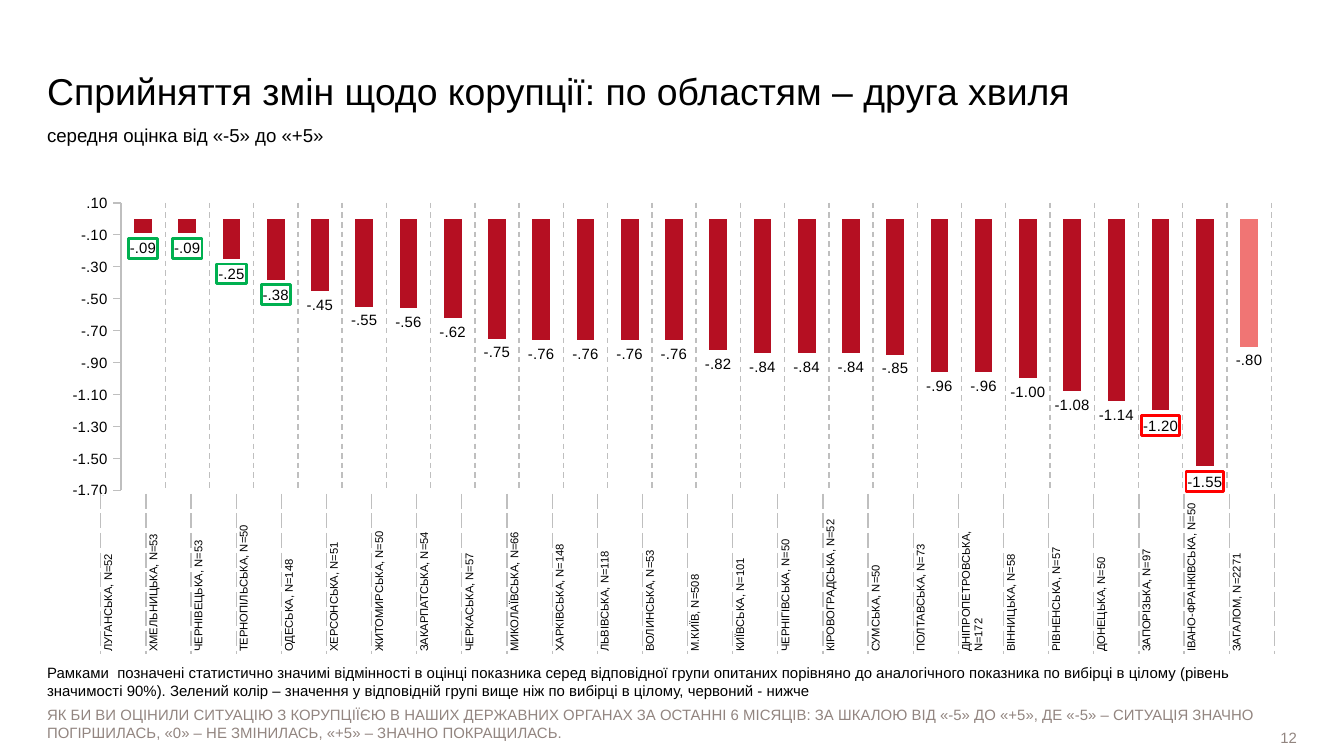
"""Build the regional corruption perception slide with its column chart."""
import pptx
import pptx.chart.data
import pptx.dml.color
import pptx.enum.chart
import pptx.enum.dml
import pptx.enum.text
import pptx.oxml
import pptx.oxml.ns
import pptx.util

Inches = pptx.util.Inches
FONT = "Arial"
NUMBER_FORMAT = "####.00"
COLORS = {
    "text": "000000", "muted": "928580", "paper": "FFFFFF", "rule": "BFBFBF",
    "region": "B50F22", "total": "F07574", "higher": "00B050", "lower": "FF0000",
}
REGIONS = [
    ("ЛУГАНСЬКА", 52, -0.09, "higher"), ("ХМЕЛЬНИЦЬКА", 53, -0.09, "higher"),
    ("ЧЕРНІВЕЦЬКА", 53, -0.25, "higher"), ("ТЕРНОПІЛЬСЬКА", 50, -0.38, "higher"),
    ("ОДЕСЬКА", 148, -0.45, None), ("ХЕРСОНСЬКА", 51, -0.55, None),
    ("ЖИТОМИРСЬКА", 50, -0.56, None), ("ЗАКАРПАТСЬКА", 54, -0.62, None),
    ("ЧЕРКАСЬКА", 57, -0.75, None), ("МИКОЛАЇВСЬКА", 66, -0.76, None),
    ("ХАРКІВСЬКА", 148, -0.76, None), ("ЛЬВІВСЬКА", 118, -0.76, None),
    ("ВОЛИНСЬКА", 53, -0.76, None), ("М.КИЇВ", 508, -0.82, None),
    ("КИЇВСЬКА", 101, -0.84, None), ("ЧЕРНІГІВСЬКА", 50, -0.84, None),
    ("КІРОВОГРАДСЬКА", 52, -0.84, None), ("СУМСЬКА", 50, -0.85, None),
    ("ПОЛТАВСЬКА", 73, -0.96, None), ("ДНІПРОПЕТРОВСЬКА", 172, -0.96, None),
    ("ВІННИЦЬКА", 58, -1, None), ("РІВНЕНСЬКА", 57, -1.08, None),
    ("ДОНЕЦЬКА", 50, -1.14, None), ("ЗАПОРІЗЬКА", 97, -1.2, "lower"),
    ("ІВАНО-ФРАНКІВСЬКА", 50, -1.55, "lower"), ("ЗАГАЛОМ", 2271, -0.8, None),
]
PAGE_NUMBER = ("12", (8.23, 5.41, 1.42, 0.16), 8, "muted")
TITLE = ("Сприйняття змін щодо корупції: по областям – друга хвиля", (0.35, 0.21, 9.45, 0.63), 20, "text")
SUBTITLE = ("середня оцінка від «-5» до «+5»", (0.35, 0.92, 9.29, 0.24), 10, "text")
QUESTION = (
    "ЯК БИ ВИ ОЦІНИЛИ СИТУАЦІЮ З КОРУПЦІЇЄЮ В НАШИХ ДЕРЖАВНИХ ОРГАНАХ ЗА ОСТАННІ 6 МІСЯЦІВ: "
    "ЗА ШКАЛОЮ ВІД «-5» ДО «+5», ДЕ «-5» – СИТУАЦІЯ ЗНАЧНО ПОГІРШИЛАСЬ, «0» – НЕ ЗМІНИЛАСЬ, "
    "«+5» – ЗНАЧНО ПОКРАЩИЛАСЬ.", (0.35, 5.25, 9.29, 0.16), 8, "muted")
FRAME_NOTE = (
    "Рамками  позначені статистично значимі відмінності в оцінці показника серед відповідної групи "
    "опитаних порівняно до аналогічного показника по вибірці в цілому (рівень значимості 90%). "
    "Зелений колір – значення у відповідній групі вище ніж по вибірці в цілому, червоний - нижче",
    (0.35, 4.94, 9.29, 0.16), 8, "text")
SLIDE_WIDTH = 10
CHART_AREA = (0.35, 1.4, 9.29, 2.36)
PLOT_AREA = (0.9, 1.51, 8.56, 2.14)
TABLE_AREA = (0.75, 3.68, 8.74, 1.18)


def rgb(name):
    return pptx.dml.color.RGBColor.from_string(COLORS[name])


def style_font(font, size, color="text"):
    font.name = FONT
    font.size = pptx.util.Pt(size)
    font.color.rgb = rgb(color)


def style_rule(line, dashed=False):
    line.color.rgb = rgb("rule")
    line.width = pptx.util.Pt(0.75)
    if dashed:
        line.dash_style = pptx.enum.dml.MSO_LINE.DASH


def add_text(page, content, anchor="TOP", align="LEFT", space_before=0):
    text, area, size, color = content
    box = page.shapes.add_textbox(*map(Inches, area))
    frame = box.text_frame
    frame.word_wrap = True
    frame.margin_left = frame.margin_top = frame.margin_right = frame.margin_bottom = 0
    frame.vertical_anchor = getattr(pptx.enum.text.MSO_ANCHOR, anchor)
    para = frame.paragraphs[0]
    para.text = text
    para.alignment = getattr(pptx.enum.text.PP_ALIGN, align)
    para.space_before = pptx.util.Pt(space_before)
    style_font(para.font, size, color)
    return box


def frame_label(series, index, color):
    label = series.points[index].data_label
    style_font(label.font, 8)
    label.position = pptx.enum.chart.XL_LABEL_POSITION.OUTSIDE_END
    mark = next(item for item in series.data_labels._element.findall(pptx.oxml.ns.qn("c:dLbl"))
                if item.find(pptx.oxml.ns.qn("c:idx")).get("val") == str(index))
    for old in mark.findall(pptx.oxml.ns.qn("c:spPr")):
        mark.remove(old)
    spaces = pptx.oxml.ns.nsdecls("c", "a")
    mark.insert(1, pptx.oxml.parse_xml(
        f'<c:numFmt {spaces} formatCode="{NUMBER_FORMAT}" sourceLinked="0"/>'))
    mark.insert(2, pptx.oxml.parse_xml(
        f'<c:spPr {spaces}><a:noFill/><a:ln w="{pptx.util.Pt(1.5)}"><a:solidFill>'
        f'<a:srgbClr val="{COLORS[color]}"/></a:solidFill></a:ln></c:spPr>'))


def place_plot(chart):
    area = chart._chartSpace.chart.plotArea
    for old in area.findall(pptx.oxml.ns.qn("c:layout")):
        area.remove(old)
    left, top, width, height = CHART_AREA
    shares = {
        "x": (PLOT_AREA[0] - left) / width, "y": (PLOT_AREA[1] - top) / height,
        "w": PLOT_AREA[2] / width, "h": PLOT_AREA[3] / height,
    }
    modes = '<c:layoutTarget val="inner"/><c:xMode val="edge"/><c:yMode val="edge"/>'
    sizes = "".join(f'<c:{key} val="{value:.4f}"/>' for key, value in shares.items())
    area.insert(0, pptx.oxml.parse_xml(
        f'<c:layout {pptx.oxml.ns.nsdecls("c")}><c:manualLayout>{modes}{sizes}</c:manualLayout></c:layout>'))


def add_score_chart(page):
    enums = pptx.enum.chart
    data = pptx.chart.data.CategoryChartData(number_format=NUMBER_FORMAT)
    data.categories = [str(number) for number in range(1, len(REGIONS) + 1)]
    data.add_series("Series 1", [score for _, _, score, _ in REGIONS])
    chart = page.shapes.add_chart(
        enums.XL_CHART_TYPE.COLUMN_CLUSTERED, *map(Inches, CHART_AREA), data).chart
    style_font(chart.font, 8)
    chart.has_legend = chart.has_title = False
    place_plot(chart)
    regions_axis, score_axis = chart.category_axis, chart.value_axis
    regions_axis.visible = False
    regions_axis.has_major_gridlines = True
    style_rule(regions_axis.major_gridlines.format.line, dashed=True)
    score_axis.has_major_gridlines = False
    score_axis.minimum_scale, score_axis.maximum_scale, score_axis.major_unit = -1.7, 0.1, 0.2
    score_axis.major_tick_mark = enums.XL_TICK_MARK.OUTSIDE
    score_axis.tick_labels.number_format = NUMBER_FORMAT
    score_axis.tick_labels.number_format_is_linked = False
    style_rule(score_axis.format.line)
    plot = chart.plots[0]
    plot.gap_width = 150
    plot.vary_by_categories = False
    series = plot.series[0]
    series.invert_if_negative = False
    series.format.fill.solid()
    series.format.fill.fore_color.rgb = rgb("region")
    total = series.points[len(REGIONS) - 1].format.fill
    total.solid()
    total.fore_color.rgb = rgb("total")
    labels = series.data_labels
    labels.show_value = True
    labels.position = enums.XL_LABEL_POSITION.OUTSIDE_END
    labels.number_format = NUMBER_FORMAT
    labels.number_format_is_linked = False
    style_font(labels.font, 8)
    for index, (_, _, _, difference) in enumerate(REGIONS):
        if difference:
            frame_label(series, index, difference)


def add_region_table(page):
    table = page.shapes.add_table(1, len(REGIONS), *map(Inches, TABLE_AREA)).table
    table.first_row = table.horz_banding = False
    for index, (region, count, _, _) in enumerate(REGIONS):
        table.columns[index].width = Inches(TABLE_AREA[2] / len(REGIONS))
        cell = table.cell(0, index)
        cell.fill.background()
        cell.vertical_anchor = pptx.enum.text.MSO_ANCHOR.MIDDLE
        cell.margin_left = cell.margin_top = cell.margin_right = Inches(0.01)
        cell.margin_bottom = 0
        para = cell.text_frame.paragraphs[0]
        para.text = f"{region}, N={count}"
        style_font(para.font, 6)
        properties = cell._tc.get_or_add_tcPr()
        properties.set("vert", "vert270")
        for position, side in enumerate(("lnL", "lnR")):
            properties.insert(position, pptx.oxml.parse_xml(
                f'<a:{side} {pptx.oxml.ns.nsdecls("a")} w="{pptx.util.Pt(0.75)}"><a:solidFill>'
                f'<a:srgbClr val="{COLORS["rule"]}"/></a:solidFill><a:prstDash val="dash"/></a:{side}>'))


def main():
    deck = pptx.Presentation()
    deck.slide_width, deck.slide_height = Inches(SLIDE_WIDTH), Inches(SLIDE_WIDTH * 9 / 16)
    page = deck.slides.add_slide(deck.slide_layouts[6])
    number_box = add_text(page, PAGE_NUMBER, anchor="MIDDLE", align="RIGHT")
    number_box.fill.solid()
    number_box.fill.fore_color.rgb = rgb("paper")
    add_text(page, TITLE, anchor="BOTTOM")
    add_score_chart(page)
    add_text(page, QUESTION)
    add_text(page, SUBTITLE, space_before=3)
    add_region_table(page)
    add_text(page, FRAME_NOTE)
    deck.save("out.pptx")


if __name__ == "__main__":
    main()
